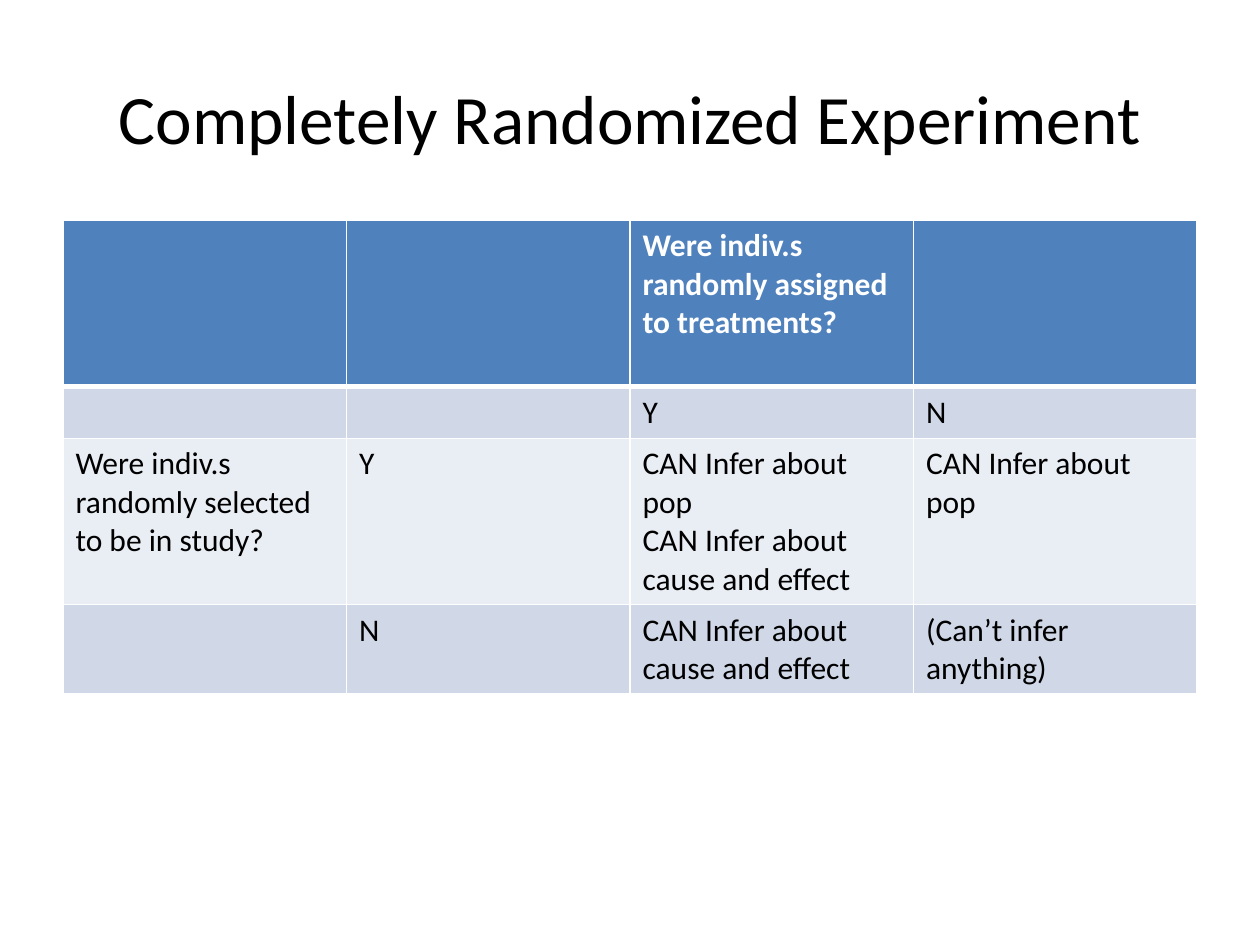
from lxml.etree import SubElement
from pptx import Presentation
from pptx.dml.color import RGBColor
from pptx.enum.text import MSO_ANCHOR, PP_ALIGN
from pptx.oxml.ns import qn
from pptx.util import Inches, Pt

FONT = "Calibri"
BLACK = RGBColor(0x00, 0x00, 0x00)
WHITE = RGBColor(0xFF, 0xFF, 0xFF)
HEADER_BLUE = RGBColor(0x4F, 0x81, 0xBD)
BAND_DARK = RGBColor(0xD0, 0xD8, 0xE8)
BAND_LIGHT = RGBColor(0xE9, 0xED, 0xF4)

POPULATION = "CAN Infer about pop"
CAUSATION = "CAN Infer about cause and effect"
INFERENCES = [
    ["", "", "Were indiv.s randomly assigned to treatments?", ""],
    ["", "", "Y", "N"],
    ["Were indiv.s randomly selected to be in study?", "Y",
     f"{POPULATION}\n{CAUSATION}", POPULATION],
    ["", "N", CAUSATION, "(Can’t infer anything)"],
]
ROW_HEIGHTS = [1.32, 0.41, 1.32, 0.71]
ROW_FILLS = [HEADER_BLUE, BAND_DARK, BAND_LIGHT, BAND_DARK]


def style_paragraph(paragraph, size, color, bold=False):
    """Set the font of a whole paragraph."""
    font = paragraph.font
    font.name, font.size, font.bold = FONT, Pt(size), bold
    font.color.rgb = color


def set_borders(cell, widths):
    """Draw white borders, with widths in points keyed by side."""
    properties = cell._tc.get_or_add_tcPr()
    for position, side in enumerate("LRTB"):
        line = SubElement(properties, qn(f"a:ln{side}"), w=str(Pt(widths[side])))
        fill = SubElement(line, qn("a:solidFill"))
        SubElement(fill, qn("a:srgbClr"), val=str(WHITE))
        properties.remove(line)
        properties.insert(position, line)


def add_title(slide, left, top, width, height):
    """Place the centred slide title in the given box."""
    title = slide.shapes.add_textbox(left, top, width, height).text_frame
    title.word_wrap = True
    title.vertical_anchor = MSO_ANCHOR.MIDDLE
    heading = title.paragraphs[0]
    heading.text = "Completely Randomized Experiment"
    heading.alignment = PP_ALIGN.CENTER
    style_paragraph(heading, 39.6, BLACK)


def add_inference_table(slide, left, top, width):
    """Place the table of inferences, with equal columns across the width."""
    height = Inches(sum(ROW_HEIGHTS))
    table = slide.shapes.add_table(
        len(INFERENCES), len(INFERENCES[0]), left, top, width, height).table
    for row_index, texts in enumerate(INFERENCES):
        table.rows[row_index].height = Inches(ROW_HEIGHTS[row_index])
        is_header = row_index == 0
        widths = {"L": 1, "R": 1, "T": 3 if row_index == 1 else 1,
                  "B": 3 if is_header else 1}
        for column_index, text in enumerate(texts):
            cell = table.cell(row_index, column_index)
            cell.text = text
            cell.fill.solid()
            cell.fill.fore_color.rgb = ROW_FILLS[row_index]
            set_borders(cell, widths)
            for paragraph in cell.text_frame.paragraphs:
                style_paragraph(paragraph, 18, WHITE if is_header else BLACK, is_header)


def main():
    """Build and save the slide."""
    presentation = Presentation()
    presentation.slide_width, presentation.slide_height = Inches(10), Inches(7.5)
    slide = presentation.slides.add_slide(presentation.slide_layouts[6])
    add_title(slide, Inches(0.5), Inches(0.3), Inches(9), Inches(1.25))
    add_inference_table(slide, Inches(0.5), Inches(1.75), Inches(9))
    presentation.save("out.pptx")


if __name__ == "__main__":
    main()
